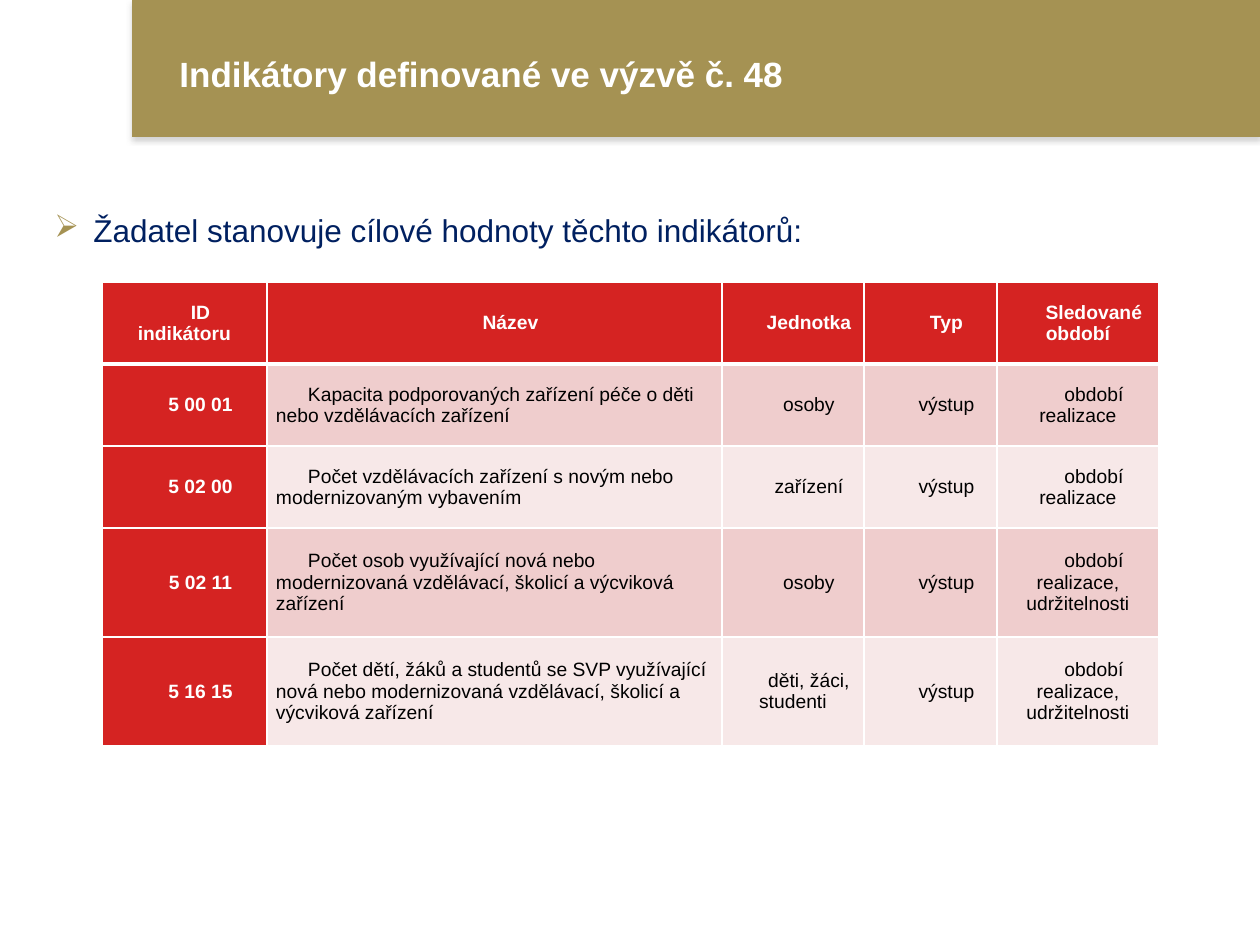
from dataclasses import dataclass

from lxml.etree import SubElement
from pptx import Presentation
from pptx.dml.color import RGBColor
from pptx.enum.shapes import MSO_SHAPE
from pptx.enum.text import MSO_ANCHOR, PP_ALIGN
from pptx.oxml import parse_xml
from pptx.oxml.ns import nsdecls, qn
from pptx.util import Emu, Pt

EMU_PER_PX = 914400 / 126
GOLD, RED, NAVY, WHITE, BLACK = "A59253", "D52322", "002060", "FFFFFF", "000000"
BANDS = ("EFCDCD", "F7E8E8")


@dataclass(frozen=True)
class Box:
    left: int
    top: int
    width: int
    height: int

    def emu(self):
        return [px(n) for n in (self.left, self.top, self.width, self.height)]


@dataclass(frozen=True)
class Indicator:
    code: str
    title: str
    unit: str
    kind: str
    period: str
    height: int

    def texts(self):
        return self.code, self.title, self.unit, self.kind, self.period


HEADER = Indicator("ID indikátoru", "Název", "Jednotka", "Typ", "Sledované období", 82)
INDICATORS = [
    Indicator("5 00 01", "Kapacita podporovaných zařízení péče o děti nebo vzdělávacích zařízení",
              "osoby", "výstup", "období realizace", 82),
    Indicator("5 02 00", "Počet vzdělávacích zařízení s novým nebo modernizovaným vybavením",
              "zařízení", "výstup", "období realizace", 82),
    Indicator("5 02 11", "Počet osob využívající nová nebo modernizovaná vzdělávací, "
              "školicí a výcviková zařízení",
              "osoby", "výstup", "období realizace, udržitelnosti", 109),
    Indicator("5 16 15", "Počet dětí, žáků a studentů se SVP využívající nová nebo "
              "modernizovaná vzdělávací, školicí a výcviková zařízení",
              "děti, žáci, studenti", "výstup", "období realizace, udržitelnosti", 109),
]
COLUMN_WIDTHS = (165, 455, 142, 133, 162)


def px(count: int) -> Emu:
    return Emu(round(count * EMU_PER_PX))


def color(value: str) -> RGBColor:
    return RGBColor.from_string(value)


def apply(target, values: dict) -> None:
    for name, value in values.items():
        setattr(target, name, value)


def write(paragraph, text: str, size: int, ink: str, bold: bool = False) -> None:
    run = paragraph.add_run()
    run.text = text
    apply(run.font, {"name": "Arial", "size": Pt(size), "bold": bold})
    run.font.color.rgb = color(ink)


def indent(paragraph, margin: int, first: int) -> None:
    properties = paragraph._p.get_or_add_pPr()
    properties.set("marL", str(px(margin)))
    properties.set("indent", str(px(first)))


def add_band(slide, box: Box) -> None:
    band = slide.shapes.add_shape(MSO_SHAPE.RECTANGLE, *box.emu())
    band.fill.solid()
    band.fill.fore_color.rgb = color(GOLD)
    band.line.fill.background()
    band.shadow.inherit = False
    band._element.spPr.find(qn("a:effectLst")).append(parse_xml(
        f'<a:outerShdw {nsdecls("a")} blurRad="{Pt(3.1)}" dist="{Pt(1.8)}" dir="5400000" '
        'algn="t" rotWithShape="0"><a:srgbClr val="808080"><a:alpha val="35000"/>'
        '</a:srgbClr></a:outerShdw>'))


def add_text(slide, box: Box, anchor: MSO_ANCHOR):
    frame = slide.shapes.add_textbox(*box.emu()).text_frame
    apply(frame, {"word_wrap": True, "vertical_anchor": anchor})
    return frame.paragraphs[0]


def add_bullet(paragraph, mark: str, ink: str) -> None:
    indent(paragraph, 39, -39)
    properties = paragraph._p.get_or_add_pPr()
    tint = SubElement(properties, qn("a:buClr"))
    SubElement(tint, qn("a:srgbClr"), val=ink)
    SubElement(properties, qn("a:buChar"), char=mark)


def set_borders(cell, widths: dict) -> None:
    properties = cell._tc.get_or_add_tcPr()
    for position, (side, width) in enumerate(widths.items()):
        properties.insert(position, parse_xml(
            f'<a:ln{side} {nsdecls("a")} w="{Pt(width)}"><a:solidFill>'
            f'<a:srgbClr val="{WHITE}"/></a:solidFill></a:ln{side}>'))


def fill_cell(cell, text: str, row: int, column: int) -> None:
    strong = row == 0 or column == 0
    apply(cell, {"vertical_anchor": MSO_ANCHOR.MIDDLE, "margin_left": px(9),
                 "margin_right": px(9), "margin_top": 0, "margin_bottom": 0})
    cell.fill.solid()
    cell.fill.fore_color.rgb = color(RED if strong else BANDS[(row - 1) % 2])
    set_borders(cell, {"L": 1, "R": 1, "T": 3 if row == 1 else 1, "B": 3 if row == 0 else 1})
    paragraph = cell.text_frame.paragraphs[0]
    paragraph.alignment = PP_ALIGN.LEFT if column == 1 and row else PP_ALIGN.CENTER
    indent(paragraph, 0, 32)
    write(paragraph, text, 11, WHITE if strong else BLACK, strong)


def add_indicators(slide, left: int, top: int) -> None:
    rows = [HEADER, *INDICATORS]
    box = Box(left, top, sum(COLUMN_WIDTHS), sum(row.height for row in rows))
    table = slide.shapes.add_table(len(rows), len(COLUMN_WIDTHS), *box.emu()).table
    for column, width in zip(table.columns, COLUMN_WIDTHS):
        column.width = px(width)
    for r, indicator in enumerate(rows):
        table.rows[r].height = px(indicator.height)
        for c, text in enumerate(indicator.texts()):
            fill_cell(table.cell(r, c), text, r, c)


def main() -> None:
    deck = Presentation()
    apply(deck, {"slide_width": px(1260), "slide_height": px(945)})
    slide = deck.slides.add_slide(deck.slide_layouts[6])
    add_band(slide, Box(132, 0, 1128, 137))
    title = add_text(slide, Box(167, 51, 1030, 44), MSO_ANCHOR.MIDDLE)
    write(title, "Indikátory definované ve výzvě č. 48", 20, WHITE, True)
    lead = add_text(slide, Box(42, 205, 1085, 50), MSO_ANCHOR.TOP)
    add_bullet(lead, "➢", GOLD)
    write(lead, "Žadatel stanovuje cílové hodnoty těchto indikátorů:", 18, NAVY)
    add_indicators(slide, 102, 282)
    deck.save("out.pptx")


if __name__ == "__main__":
    main()
